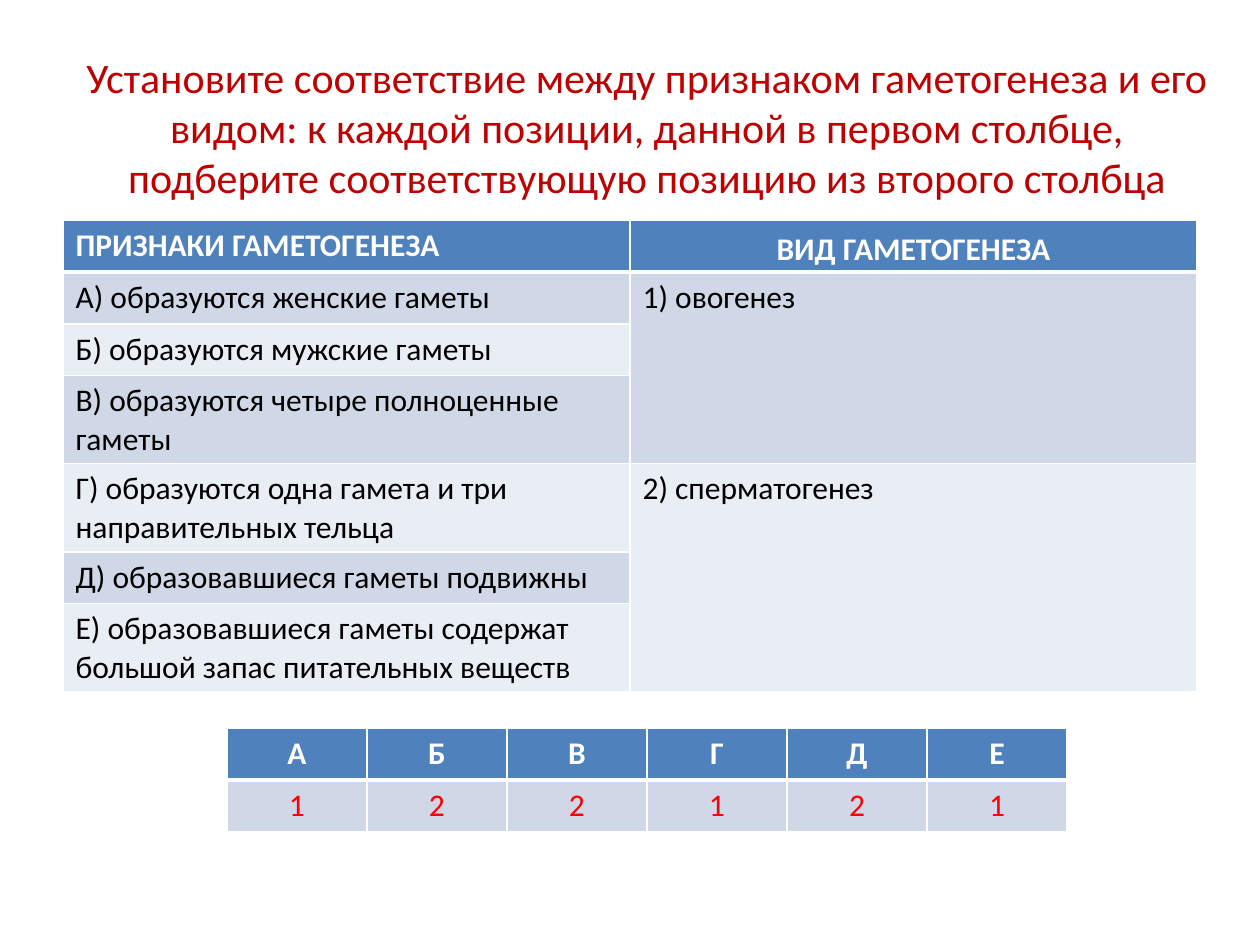
from dataclasses import dataclass

from lxml.etree import SubElement
from pptx import Presentation
from pptx.dml.color import RGBColor as Rgb
from pptx.enum.text import MSO_ANCHOR as Anchor, PP_ALIGN as Align
from pptx.oxml.ns import qn
from pptx.util import Inches, Pt

HUES = {
    "title": "C00000",
    "head": "4F81BD",
    "dark": "D0D8E8",
    "light": "E9EDF4",
    "white": "FFFFFF",
    "black": "000000",
    "red": "FF0000",
}
FONT = "Calibri"


@dataclass
class Grid:
    left: float
    top: float
    width: float
    rows: list[list[str]]
    ink: str
    align: Align


def hue(name: str) -> Rgb:
    return Rgb.from_string(HUES[name])


def write(frame, text: str, size: int, ink: str, align: Align, bold: bool = False):
    para = frame.paragraphs[0]
    para.alignment = align
    run = para.add_run()
    run.text = text
    font = run.font
    font.name, font.size, font.bold = FONT, Pt(size), bold
    font.color.rgb = hue(ink)
    return para


def edge(cell, base: int) -> None:
    props = cell._tc.get_or_add_tcPr()
    for side, width in (("L", 1), ("R", 1), ("T", 1), ("B", base)):
        line = SubElement(props, qn(f"a:ln{side}"), w=str(Pt(width)))
        fill = SubElement(line, qn("a:solidFill"))
        SubElement(fill, qn("a:srgbClr"), val=HUES["white"])


def draw(slide, grid: Grid):
    rows, cols = len(grid.rows), len(grid.rows[0])
    step = 0.41
    table = slide.shapes.add_table(
        rows, cols, Inches(grid.left), Inches(grid.top),
        Inches(grid.width), Inches(step * rows),
    ).table
    for col in table.columns:
        col.width = Inches(grid.width / cols)
    for i, texts in enumerate(grid.rows):
        table.rows[i].height = Inches(step)
        head = i == 0
        tone = "head" if head else ("light", "dark")[i % 2]
        for j, text in enumerate(texts):
            cell = table.cell(i, j)
            edge(cell, 3 if head else 1)
            cell.fill.solid()
            cell.fill.fore_color.rgb = hue(tone)
            if text:
                write(cell.text_frame, text, 18, "white" if head else grid.ink, grid.align, head)
    return table


def main() -> None:
    deck = Presentation()
    deck.slide_width, deck.slide_height = Inches(10), Inches(7.5)
    slide = deck.slides.add_slide(deck.slide_layouts[6])

    box = slide.shapes.add_textbox(Inches(0.5), Inches(0.3), Inches(9.27), Inches(1.81))
    frame = box.text_frame
    frame.word_wrap = True
    frame.vertical_anchor = Anchor.MIDDLE
    frame.margin_bottom = Inches(0.45)
    write(
        frame,
        "Установите соответствие между признаком гаметогенеза и его видом: "
        "к каждой позиции, данной в первом столбце, "
        "подберите соответствующую позицию из второго столбца",
        24, "title", Align.CENTER,
    )

    signs = draw(slide, Grid(0.5, 1.75, 9, [
        ["ПРИЗНАКИ ГАМЕТОГЕНЕЗА", "ВИД ГАМЕТОГЕНЕЗА"],
        ["А) образуются женские гаметы", "1) овогенез"],
        ["Б) образуются мужские гаметы", ""],
        ["В) образуются четыре полноценные гаметы", ""],
        ["Г) образуются одна гамета и три направительных тельца", "2) сперматогенез"],
        ["Д) образовавшиеся гаметы подвижны", ""],
        ["Е) образовавшиеся гаметы содержат большой запас питательных веществ", ""],
    ], "black", Align.LEFT))
    for row in (1, 4):
        signs.cell(row, 1).merge(signs.cell(row + 2, 1))

    kind = signs.cell(0, 1)
    kind.vertical_anchor = Anchor.MIDDLE
    kind.margin_left = kind.margin_right = Inches(0.03)
    kind.margin_top = kind.margin_bottom = Inches(0.03)
    para = kind.text_frame.paragraphs[0]
    para.alignment = Align.CENTER
    para.line_spacing = 1.15
    para.space_before = Pt(2.9)

    draw(slide, Grid(1.8, 5.78, 6.67, [list("АБВГДЕ"), list("122121")], "red", Align.CENTER))
    deck.save("out.pptx")


if __name__ == "__main__":
    main()
